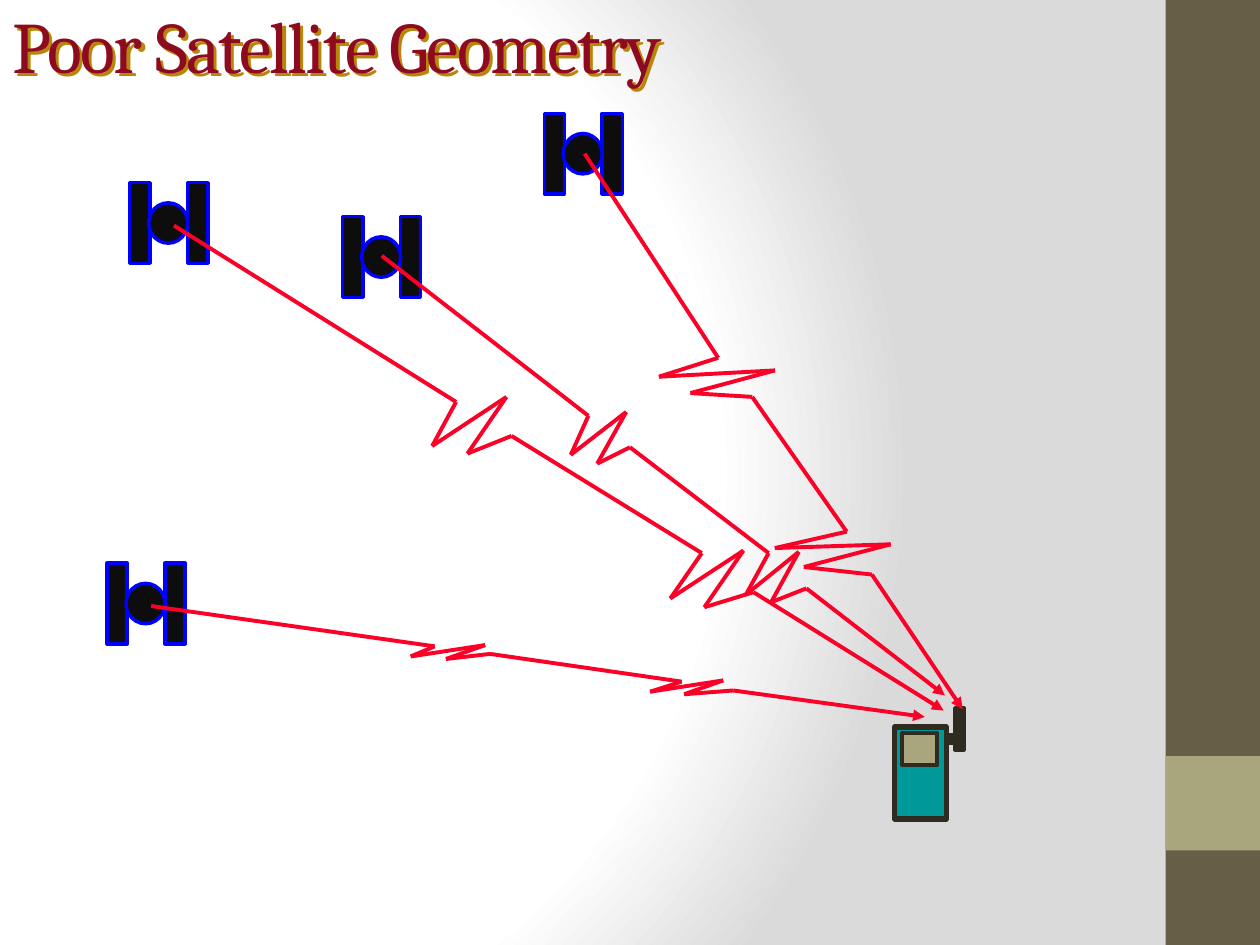
from pptx import Presentation
from pptx.dml.color import RGBColor
from pptx.enum.shapes import MSO_CONNECTOR as LINE, MSO_SHAPE as SHAPE
from pptx.enum.text import MSO_ANCHOR as ANCHOR
from pptx.oxml import parse_xml
from pptx.oxml.ns import nsdecls
from pptx.util import Inches, Pt

# Content
TITLE = "Poor Satellite Geometry"
COLORS = {
    "white": "FFFFFF", "haze": "DADADA", "band": "675E47", "accent": "A9A57C",
    "satellite": "0D0D0D", "outline": "0000FF", "case": "009999",
    "frame": "2F2B20", "title": "8E0A20", "title_shadow": "B8860B",
    "signal": "FC0128",
}
WIDTH, HEIGHT = 10, 7.5
SATELLITES = [(4.32, 0.9), (0.85, 4.47), (2.72, 1.72), (1.03, 1.45)]

# Satellite parts: preset, offset in the satellite, size
SATELLITE_PARTS = [
    (SHAPE.RECTANGLE, (0, 0), (0.16, 0.64)),
    (SHAPE.RECTANGLE, (0.46, 0), (0.16, 0.64)),
    (SHAPE.OVAL, (0.15, 0.16), (0.31, 0.32)),
]
# Receiver parts: box, fill, line width
RECEIVER_PARTS = [
    ((7.1, 5.77, 0.41, 0.73), "case", 3),
    ((7.16, 5.82, 0.28, 0.25), "accent", 2.25),
    ((7.58, 5.62, 0.07, 0.33), "frame", 2.25),
    ((7.51, 5.83, 0.12, 0.07), "frame", 2.25),
]
# Each signal runs from a satellite through two zigzags to the receiver
SIGNALS = [
    [(4.64, 1.22), (5.7, 2.84), (5.23, 2.99), (6.15, 2.94), (5.48, 3.12),
     (5.97, 3.15), (6.72, 4.22), (6.15, 4.35), (7.07, 4.32), (6.38, 4.5),
     (6.92, 4.56), (7.64, 5.63)],
    [(1.38, 1.79), (3.62, 3.19), (3.43, 3.54), (4.02, 3.15), (3.71, 3.6),
     (4.06, 3.46), (5.57, 4.39), (5.32, 4.75), (5.9, 4.37), (5.59, 4.82),
     (5.98, 4.7), (7.49, 5.64)],
    [(1.2, 4.81), (3.45, 5.13), (3.26, 5.21), (3.85, 5.12), (3.54, 5.23),
     (3.89, 5.19), (5.41, 5.41), (5.16, 5.49), (5.74, 5.4), (5.43, 5.51),
     (5.82, 5.48), (7.34, 5.69)],
    [(3.03, 2.03), (4.67, 3.3), (4.53, 3.61), (4.97, 3.27), (4.74, 3.68),
     (5, 3.55), (6.1, 4.39), (5.92, 4.72), (6.34, 4.38), (6.12, 4.78),
     (6.4, 4.67), (7.5, 5.52)],
]


def color(key):
    return RGBColor.from_string(COLORS[key])


def add_part(shapes, preset, box, fill, outline=None, weight=0):
    part = shapes.add_shape(preset, *map(Inches, box))
    part.shadow.inherit = False
    part.fill.solid()
    part.fill.fore_color.rgb = color(fill)
    if outline:
        part.line.color.rgb = color(outline)
        part.line.width = Pt(weight)
    else:
        part.line.fill.background()


def add_signal(shapes, points):
    for start, end in zip(points, points[1:]):
        ray = shapes.add_connector(LINE.STRAIGHT, *map(Inches, start + end))
        ray.line.color.rgb = color("signal")
        ray.line.width = Pt(2.25)
        if end == points[-1]:
            ray.line._get_or_add_ln().append(
                parse_xml(f'<a:tailEnd {nsdecls("a")} type="triangle"/>'))
        ray._element.spPr.append(parse_xml(f'<a:effectLst {nsdecls("a")}/>'))


prs = Presentation()
prs.slide_width, prs.slide_height = Inches(WIDTH), Inches(HEIGHT)
slide = prs.slides.add_slide(prs.slide_layouts[6])

# Background with a round gradient
stops = "".join(
    f'<a:gs pos="{share * 1000}"><a:srgbClr val="{COLORS[key]}"/></a:gs>'
    for share, key in [(0, "white"), (75, "white"), (100, "haze")])
slide.element.cSld.insert(0, parse_xml(
    f'<p:bg {nsdecls("p", "a")}><p:bgPr><a:gradFill rotWithShape="1">'
    f'<a:gsLst>{stops}</a:gsLst><a:path path="circle">'
    '<a:fillToRect l="20000" t="50000" r="100000" b="50000"/></a:path>'
    '</a:gradFill><a:effectLst/></p:bgPr></p:bg>'))

# Side band
band = WIDTH * 0.075
left = WIDTH - band
add_part(slide.shapes, SHAPE.RECTANGLE, (left, 0, band, HEIGHT), "band")
add_part(slide.shapes, SHAPE.RECTANGLE, (left, HEIGHT * 0.8, band, band), "accent")

# Satellites
for x, y in SATELLITES:
    satellite = slide.shapes.add_group_shape()
    for preset, (dx, dy), size in SATELLITE_PARTS:
        add_part(satellite.shapes, preset, (x + dx, y + dy, *size),
                 "satellite", "outline", 2)

# Receiver
receiver = slide.shapes.add_group_shape()
for box, fill, weight in RECEIVER_PARTS:
    add_part(receiver.shapes, SHAPE.RECTANGLE, box, fill, "frame", weight)

# Title
heading = slide.shapes.add_textbox(0, 0, Inches(WIDTH), Inches(0.7))
heading.text_frame.word_wrap = True
heading.text_frame.vertical_anchor = ANCHOR.MIDDLE
run = heading.text_frame.paragraphs[0].add_run()
run.text = TITLE
run.font.name, run.font.size = "Cambria", Pt(41.4)
run.font.color.rgb = color("title")
run.font._element.set("spc", "-100")
heading._element.spPr.append(parse_xml(
    f'<a:effectLst {nsdecls("a")}><a:outerShdw dist="32000" dir="2700000">'
    f'<a:srgbClr val="{COLORS["title_shadow"]}"/></a:outerShdw></a:effectLst>'))

# Signals
for points in SIGNALS:
    add_signal(slide.shapes.add_group_shape().shapes, points)

prs.save("out.pptx")
